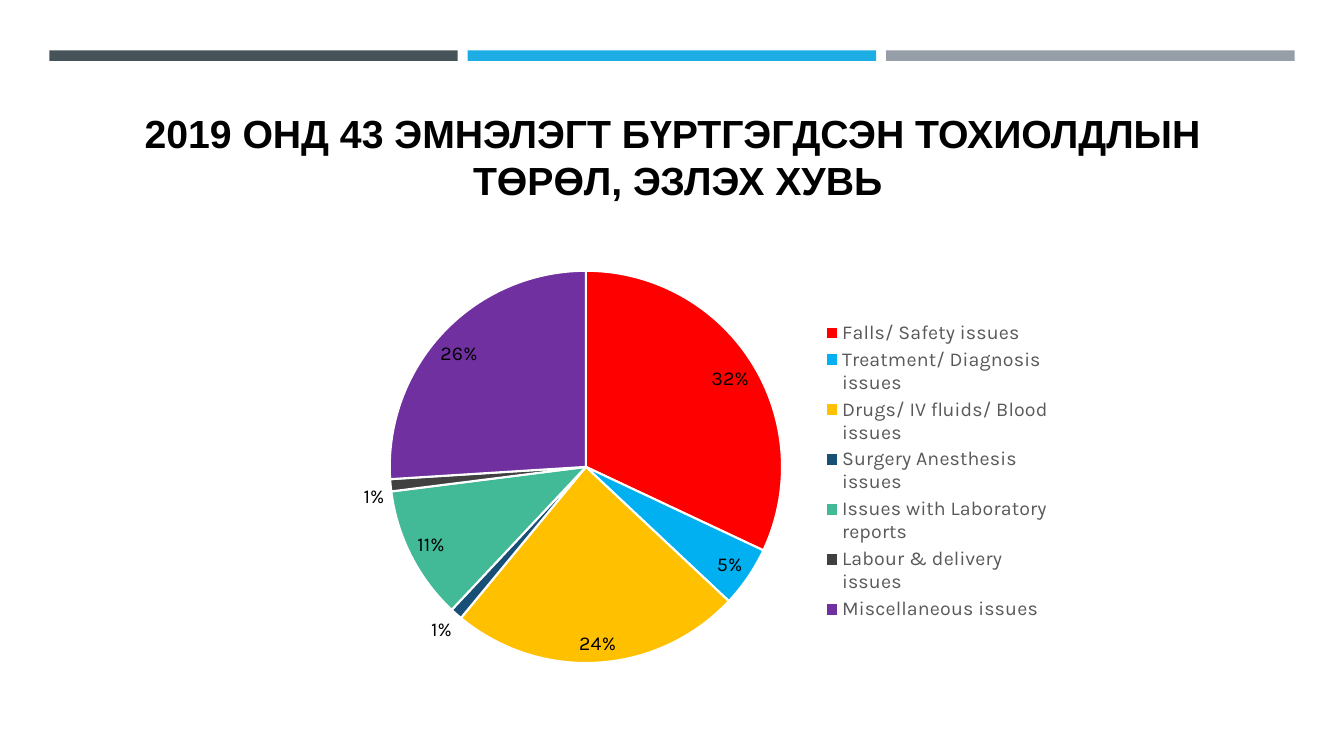
from pptx import Presentation
from pptx.chart.data import CategoryChartData
from pptx.dml.color import RGBColor
from pptx.enum.chart import XL_CHART_TYPE as CT, XL_LABEL_POSITION as LP, XL_LEGEND_POSITION as LG
from pptx.enum.shapes import MSO_SHAPE as SHAPE
from pptx.enum.text import MSO_ANCHOR as ANCHOR, PP_ALIGN as ALIGN
from pptx.oxml import parse_xml
from pptx.oxml.ns import nsdecls, qn
from pptx.util import Pt

COLORS = {
    "slate": "465359", "blue": "1CADE4", "gray": "969FA7",
    "text": "000000", "legend": "595959", "edge": "FFFFFF",
}
ISSUES = [
    ("Falls/ Safety issues", 0.32, "FF0000"),
    ("Treatment/ Diagnosis issues", 0.05, "00B0F0"),
    ("Drugs/ IV fluids/ Blood issues", 0.24, "FFC000"),
    ("Surgery Anesthesis issues", 0.01, "174F77"),
    ("Issues with Laboratory reports", 0.11, "42BA97"),
    ("Labour & delivery issues", 0.01, "404040"),
    ("Miscellaneous issues", 0.26, "7030A0"),
]


def rgb(value):
    return RGBColor.from_string(value)


def style_font(font, name, size, color, bold=False):
    font.name, font.size, font.bold = name, Pt(size), bold
    font.color.rgb = rgb(color)


def add_bars(slide, x, y, w, h, gap=7.2):
    names = ["slate", "blue", "gray"]
    bar_w = (w - gap * (len(names) - 1)) / len(names)
    for i, name in enumerate(names):
        sp = slide.shapes.add_shape(
            SHAPE.RECTANGLE, Pt(x + i * (bar_w + gap)), Pt(y), Pt(bar_w), Pt(h))
        sp.shadow.inherit = False
        sp.fill.solid()
        sp.fill.fore_color.rgb = rgb(COLORS[name])
        sp.line.fill.background()


def add_title(slide, x, y, w, h, lines):
    tf = slide.shapes.add_textbox(Pt(x), Pt(y), Pt(w), Pt(h)).text_frame
    tf.word_wrap = True
    tf.vertical_anchor = ANCHOR.BOTTOM
    p = tf.paragraphs[0]
    p.alignment = ALIGN.CENTER
    for i, line in enumerate(lines):
        if i:
            p.add_line_break()
        r = p.add_run()
        r.text = line
        style_font(r.font, "Arial", 28, COLORS["text"], True)


def set_layout(parent, index, x, y, w, h, inner=False):
    for old in parent.findall(qn("c:layout")):
        parent.remove(old)
    target = '<c:layoutTarget val="inner"/>' if inner else ""
    parent.insert(index, parse_xml(
        f'<c:layout {nsdecls("c")}><c:manualLayout>{target}'
        '<c:xMode val="edge"/><c:yMode val="edge"/>'
        f'<c:x val="{x}"/><c:y val="{y}"/><c:w val="{w}"/><c:h val="{h}"/>'
        '</c:manualLayout></c:layout>'))


def add_pie(slide, x, y, w, h):
    data = CategoryChartData(number_format="0%")
    data.categories = [name for name, _, _ in ISSUES]
    data.add_series("Series 1", [share for _, share, _ in ISSUES])
    chart = slide.shapes.add_chart(
        CT.PIE, Pt(x), Pt(y), Pt(w), Pt(h), data).chart
    chart.has_title = False
    style_font(chart.font, "Karla", 10, COLORS["text"])

    plot = chart.plots[0]
    plot.vary_by_categories = True
    for i, (_, _, color) in enumerate(ISSUES):
        fmt = plot.series[0].points[i].format
        fmt.fill.solid()
        fmt.fill.fore_color.rgb = rgb(color)
        fmt.line.color.rgb = rgb(COLORS["edge"])
        fmt.line.width = Pt(1.5)

    labels = plot.series[0].data_labels
    labels.show_value = True
    labels.number_format = "0%"
    labels.number_format_is_linked = False
    labels.position = LP.BEST_FIT
    style_font(labels.font, "Karla", 14, COLORS["text"])

    chart.has_legend = True
    legend = chart.legend
    legend.position = LG.RIGHT
    legend.include_in_layout = False
    style_font(legend.font, "Karla", 14, COLORS["legend"])
    set_layout(plot._element.getparent(), 0, 0.06, 0.03, 0.55, 0.92, inner=True)
    set_layout(legend._element, 1, 0.66, 0.14, 0.33, 0.72)


def main():
    prs = Presentation()
    prs.slide_width, prs.slide_height = Pt(960), Pt(540)
    slide = prs.slides.add_slide(prs.slide_layouts[6])
    add_bars(slide, 35.2, 36, 889.5, 7.5)
    add_title(slide, 46, 55.4, 868.4, 93.6,
              ["2019 ОНД 43 ЭМНЭЛЭГТ БҮРТГЭГДСЭН ТОХИОЛДЛЫН", " ТӨРӨЛ, ЭЗЛЭХ ХУВЬ"])
    add_pie(slide, 247, 184.3, 512, 304.6)
    prs.save("out.pptx")


if __name__ == "__main__":
    main()
